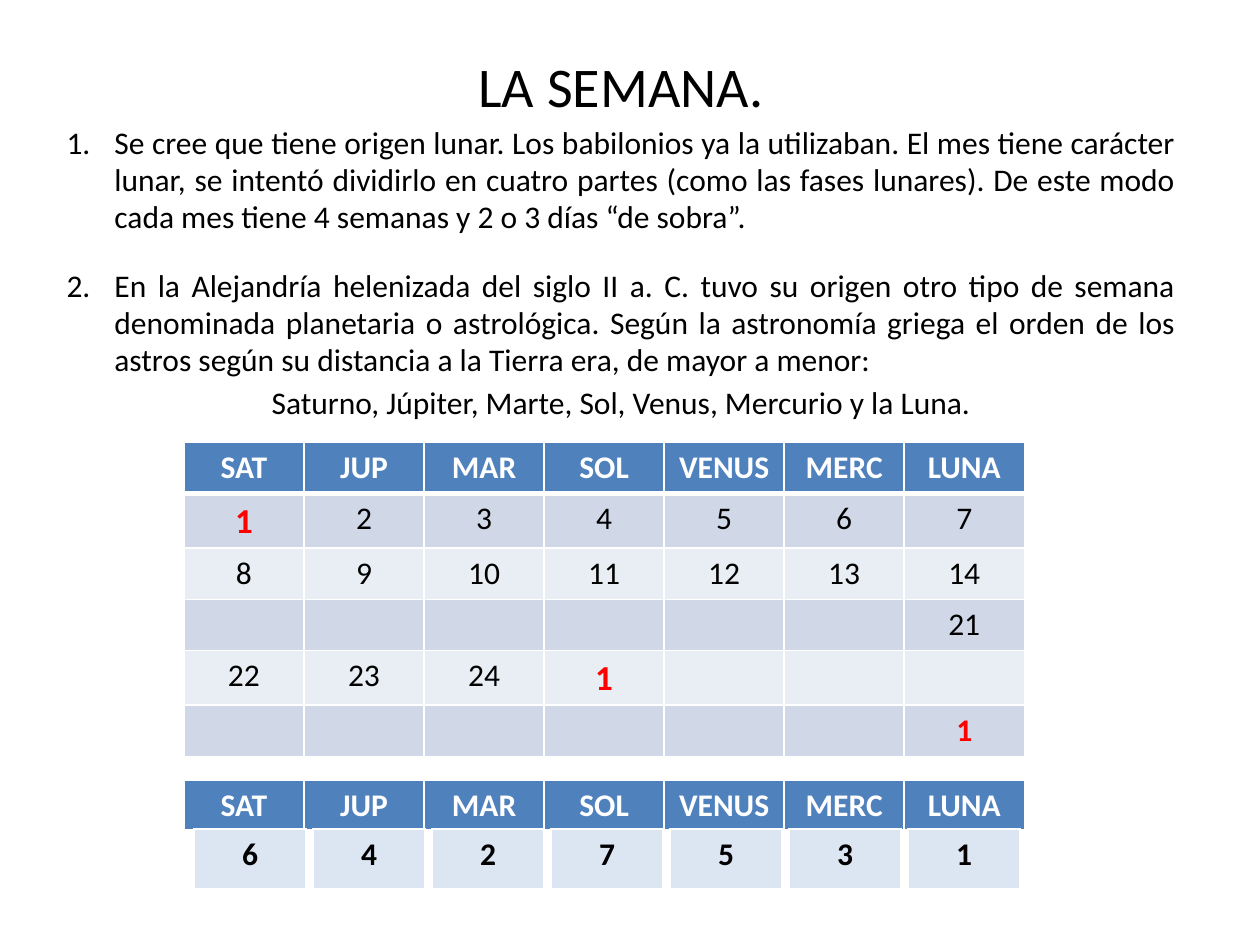
import lxml.etree
import pptx
import pptx.dml.color
import pptx.enum.text
import pptx.oxml.ns
import pptx.util

Inches = pptx.util.Inches
ALIGN = pptx.enum.text.PP_ALIGN
WHITE, BLACK, RED = "FFFFFF", "000000", "FF0000"
HEADER, BAND_DARK, BAND_LIGHT, ORDER = "4F81BD", "D0D8E8", "E9EDF4", "DCE6F2"
PLANETS = ["SAT", "JUP", "MAR", "SOL", "VENUS", "MERC", "LUNA"]
HOURS = [
    ["1", "2", "3", "4", "5", "6", "7"],
    ["8", "9", "10", "11", "12", "13", "14"],
    ["", "", "", "", "", "", "21"],
    ["22", "23", "24", "1", "", "", ""],
    ["", "", "", "", "", "", "1"],
]
FIRST_HOURS = {(0, 0): 20, (3, 3): 20, (4, 6): 18}
WEEKDAYS = ["6", "4", "2", "7", "5", "3", "1"]
ORIGIN = (
    "Se cree que tiene origen lunar. Los babilonios ya la utilizaban. "
    "El mes tiene carácter lunar, se intentó dividirlo en cuatro partes "
    "(como las fases lunares). De este modo cada mes tiene 4 semanas y "
    "2 o 3 días “de sobra”."
)
ALEXANDRIA = (
    "En la Alejandría helenizada del siglo II a. C. tuvo su origen otro tipo "
    "de semana denominada planetaria o astrológica. Según la astronomía griega "
    "el orden de los astros según su distancia a la Tierra era, de mayor a menor:"
)


def color(value):
    """Return the colour for a hex string."""
    return pptx.dml.color.RGBColor.from_string(value)


def write(paragraph, text, size=18, ink=BLACK, bold=False, align=ALIGN.CENTER, before=0, spacing=None):
    """Put formatted text into a paragraph."""
    paragraph.alignment = align
    paragraph.space_before = pptx.util.Pt(before)
    if spacing:
        paragraph.line_spacing = spacing
    run = paragraph.add_run()
    run.text = text
    run.font.name = "Calibri"
    run.font.size = pptx.util.Pt(size)
    run.font.bold = bold
    run.font.color.rgb = color(ink)


def number(paragraph, start):
    """Give a paragraph a hanging automatic number."""
    properties = paragraph._p.get_or_add_pPr()
    properties.set("marL", str(Inches(0.38)))
    properties.set("indent", str(-Inches(0.38)))
    bullet = lxml.etree.SubElement(properties, pptx.oxml.ns.qn("a:buAutoNum"))
    bullet.set("type", "arabicPeriod")
    bullet.set("startAt", str(start))


def format_cell(cell, fill, bottom):
    """Set white borders and a solid fill on a cell."""
    properties = cell._tc.get_or_add_tcPr()
    for side, width in (("L", 1), ("R", 1), ("T", 1), ("B", bottom)):
        line = lxml.etree.SubElement(properties, pptx.oxml.ns.qn("a:ln" + side))
        line.set("w", str(pptx.util.Pt(width)))
        solid = lxml.etree.SubElement(line, pptx.oxml.ns.qn("a:solidFill"))
        lxml.etree.SubElement(solid, pptx.oxml.ns.qn("a:srgbClr")).set("val", WHITE)
    cell.fill.solid()
    cell.fill.fore_color.rgb = color(fill)


def add_grid(slide, left, top, width, height, rows, columns):
    """Add a plain table with equal rows and columns."""
    table = slide.shapes.add_table(
        rows, columns, Inches(left), Inches(top), Inches(width), Inches(height)
    ).table
    table.first_row = table.horz_banding = False
    return table


def fill_header(table):
    """Write the planet names in the first row of a table."""
    for column, planet in enumerate(PLANETS):
        cell = table.cell(0, column)
        format_cell(cell, HEADER, 3)
        write(cell.text_frame.paragraphs[0], planet, ink=WHITE, bold=True)


def add_explanation(slide, left, top, width, height):
    """Add the title and the numbered explanation."""
    box = slide.shapes.add_textbox(Inches(left), Inches(top), Inches(width), Inches(height))
    frame = box.text_frame
    frame.word_wrap = True
    write(frame.paragraphs[0], "LA SEMANA.", size=32, before=2)
    for start, (text, before) in enumerate([(ORIGIN, 3.6), (ALEXANDRIA, 18)], 1):
        paragraph = frame.add_paragraph()
        write(paragraph, text, align=ALIGN.JUSTIFY, before=before, spacing=0.98)
        number(paragraph, start)
    write(frame.add_paragraph(), "Saturno, Júpiter, Marte, Sol, Venus, Mercurio y la Luna.",
          before=3.6, spacing=0.98)


def add_hours(slide, left, top, width, height):
    """Add the table of hours ruled by each planet."""
    table = add_grid(slide, left, top, width, height, len(HOURS) + 1, len(PLANETS))
    fill_header(table)
    for row, hours in enumerate(HOURS):
        for column, hour in enumerate(hours):
            cell = table.cell(row + 1, column)
            format_cell(cell, BAND_LIGHT if row % 2 else BAND_DARK, 1)
            first = (row, column) in FIRST_HOURS
            if hour:
                write(cell.text_frame.paragraphs[0], hour, bold=first,
                      size=FIRST_HOURS.get((row, column), 18), ink=RED if first else BLACK)


def add_weekdays(slide, left, top, width, height):
    """Add the planet names with a separate weekday number under each."""
    fill_header(add_grid(slide, left, top, width, 0.41, 1, len(PLANETS)))
    pitch = (width - 0.06) / len(WEEKDAYS)
    for index, weekday in enumerate(WEEKDAYS):
        table = add_grid(slide, left + 0.08 + index * pitch, top + 0.39, 0.89, height - 0.39, 1, 1)
        cell = table.cell(0, 0)
        format_cell(cell, ORDER, 3)
        write(cell.text_frame.paragraphs[0], weekday, bold=True)


def main():
    """Build and save the presentation."""
    presentation = pptx.Presentation()
    presentation.slide_width, presentation.slide_height = Inches(10), Inches(7.5)
    slide = presentation.slides.add_slide(presentation.slide_layouts[6])
    add_explanation(slide, 0.43, 0.36, 9, 4.95)
    add_hours(slide, 1.46, 3.51, 6.67, 2.44)
    add_weekdays(slide, 1.46, 6.19, 6.67, 0.88)
    presentation.save("out.pptx")


if __name__ == "__main__":
    main()
